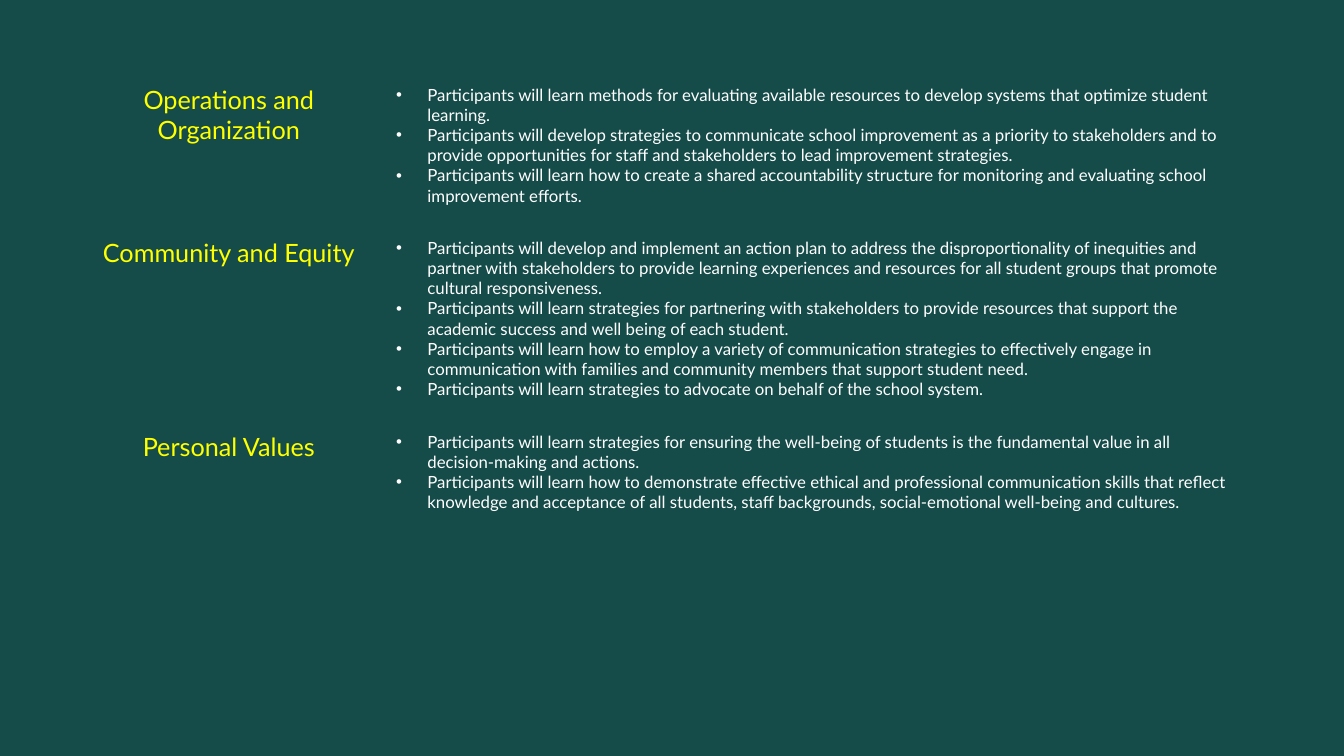
from pptx import Presentation
from pptx.dml.color import RGBColor
from pptx.enum.text import PP_ALIGN
from pptx.oxml.ns import qn
from pptx.util import Inches, Pt
from lxml import etree

CENTER = PP_ALIGN.CENTER
LEFT = PP_ALIGN.LEFT
FONT = "Lato"
COLORS = {"back": "154C4A", "head": "FFFF00", "body": "FFFFFF"}
COLS = [3.12, 8.48]
ROWS = [1.52, 1.92, 1.92]
INDENT = 0.31

GOALS = [
    ("Operations and Organization", [
        "Participants will learn methods for evaluating available resources to develop systems that optimize student learning.",
        "Participants will develop strategies to communicate school improvement as a priority to stakeholders and to provide opportunities for staff and stakeholders to lead improvement strategies.",
        "Participants will learn how to create a shared accountability structure for monitoring and evaluating school improvement efforts.",
    ]),
    ("Community and Equity", [
        "Participants will develop and implement an action plan to address the disproportionality of inequities and partner with stakeholders to provide learning experiences and resources for all student groups that promote cultural responsiveness.",
        "Participants will learn strategies for partnering with stakeholders to provide resources that support the academic success and well being of each student.",
        "Participants will learn how to employ a variety of communication strategies to effectively engage in communication with families and community members that support student need.",
        "Participants will learn strategies to advocate on behalf of the school system.",
    ]),
    ("Personal Values", [
        "Participants will learn strategies for ensuring the well-being of students is the fundamental value in all decision-making and actions.",
        "Participants will learn how to demonstrate effective ethical and professional communication skills that reflect knowledge and acceptance of all students, staff backgrounds, social-emotional well-being and cultures.",
    ]),
]


def color(name):
    return RGBColor.from_string(COLORS[name])


def add_bullet(para):
    props = para._p.get_or_add_pPr()
    props.set("marL", str(Inches(INDENT)))
    props.set("indent", str(-Inches(INDENT)))
    face = etree.SubElement(props, qn("a:buFont"))
    face.set("typeface", "Arial")
    mark = etree.SubElement(props, qn("a:buChar"))
    mark.set("char", "•")


def clear_cell(cell):
    # No borders and no fill
    props = cell._tc.get_or_add_tcPr()
    for side in ("lnL", "lnR", "lnT", "lnB"):
        line = etree.SubElement(props, qn("a:" + side))
        etree.SubElement(line, qn("a:noFill"))
    cell.fill.background()


def fill_cell(cell, lines, size, shade, align, bullets=False):
    clear_cell(cell)
    frame = cell.text_frame
    frame.text = "\n".join(lines)
    for para in frame.paragraphs:
        para.alignment = align
        font = para.font
        font.name = FONT
        font.size = Pt(size)
        font.bold = False
        font.color.rgb = color(shade)
        if bullets:
            add_bullet(para)


def add_goals(slide):
    frame = slide.shapes.add_table(
        len(ROWS), len(COLS), Inches(0.71), Inches(0.79),
        Inches(sum(COLS)), Inches(sum(ROWS)))
    table = frame.table
    table.first_row = False
    table.horz_banding = False
    for col, width in zip(table.columns, COLS):
        col.width = Inches(width)
    for row, height, (head, points) in zip(table.rows, ROWS, GOALS):
        row.height = Inches(height)
        fill_cell(row.cells[0], [head], 18, "head", CENTER)
        fill_cell(row.cells[1], points, 12, "body", LEFT, bullets=True)


def main():
    deck = Presentation()
    deck.slide_width = Inches(13.33)
    deck.slide_height = Inches(7.5)
    slide = deck.slides.add_slide(deck.slide_layouts[6])

    # Backdrop
    back = slide.background.fill
    back.solid()
    back.fore_color.rgb = color("back")

    # Goals by theme
    add_goals(slide)
    deck.save("out.pptx")


if __name__ == "__main__":
    main()
